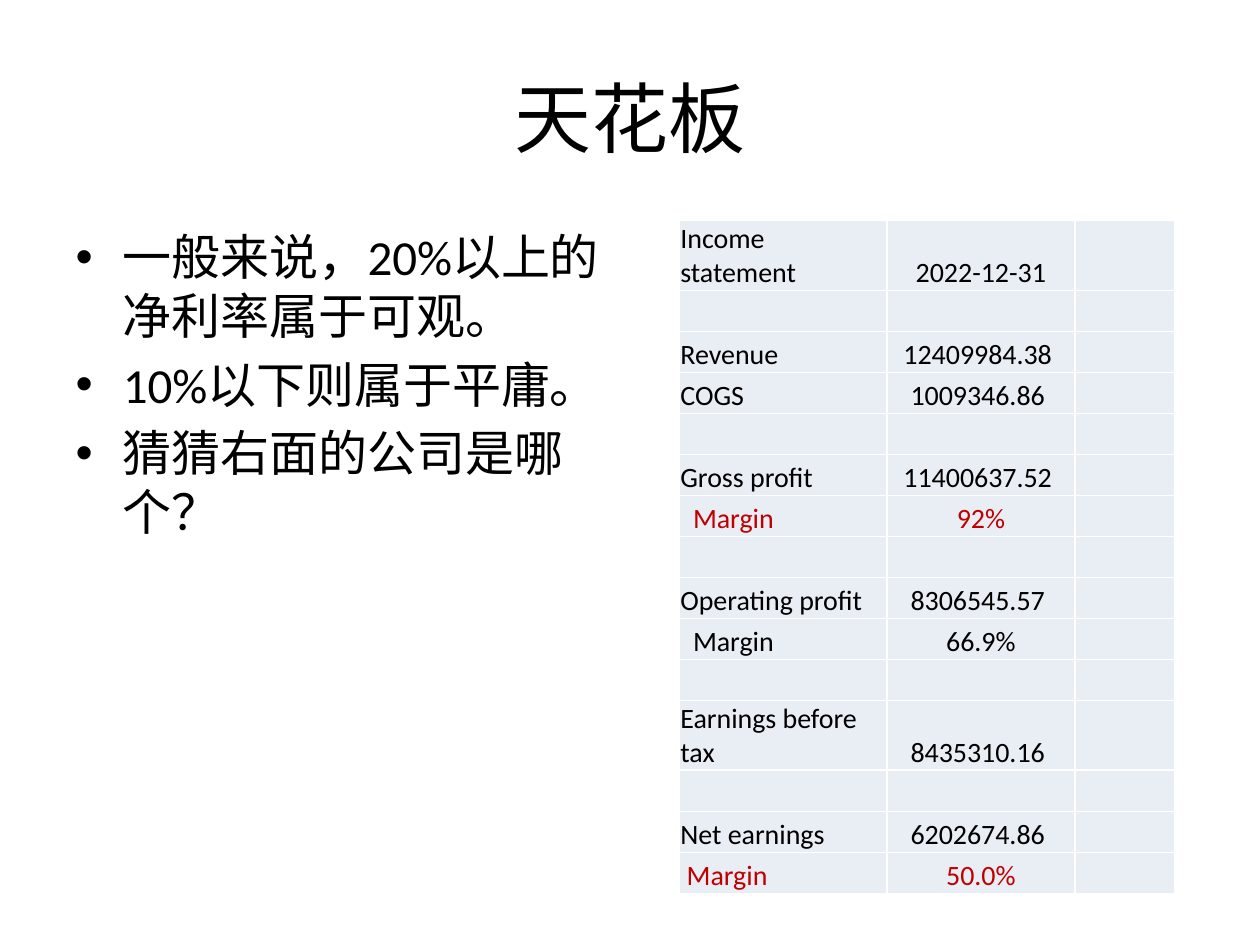
import pptx
import pptx.dml.color
import pptx.enum.text
import pptx.util

Inches = pptx.util.Inches
Pt = pptx.util.Pt
ALIGN = pptx.enum.text.PP_ALIGN
ANCHOR = pptx.enum.text.MSO_ANCHOR

BLACK, RED, WASH = "000000", "C00000", "E9EDF4"
TITLE_FONT = {"name": "Calibri", "size": Pt(44)}
ADVICE_FONT = {"name": "Calibri", "size": Pt(28)}
FIGURE_FONT = {"name": "Calibri", "size": Pt(16)}
CELL_FORMAT = {
    "vertical_anchor": ANCHOR.BOTTOM,
    "margin_left": Inches(0.01),
    "margin_right": Inches(0.01),
    "margin_top": Inches(0.01),
    "margin_bottom": 0,
}

ADVICE = [
    "一般来说，20%以上的净利率属于可观。",
    "10%以下则属于平庸。",
    "猜猜右面的公司是哪个？",
]
COLUMN_WIDTHS = [1.65, 1.49, 0.79]
TALL_ROW = 0.55
BLANK = ("", "", 0, BLACK)
STATEMENT = [
    ("Income statement", "2022-12-31", 0, BLACK),
    BLANK,
    ("Revenue", "12409984.38 ", 0, BLACK),
    ("COGS", "1009346.86 ", 0, BLACK),
    BLANK,
    ("Gross profit", "11400637.52 ", 0, BLACK),
    ("Margin", "92%", 0.1, RED),
    BLANK,
    ("Operating profit", "8306545.57 ", 0, BLACK),
    ("Margin", "66.9%", 0.1, BLACK),
    BLANK,
    ("Earnings before tax", "8435310.16 ", 0, BLACK),
    BLANK,
    ("Net earnings", "6202674.86 ", 0, BLACK),
    ("Margin", "50.0%", 0.05, RED),
]


def color(hex_value):
    return pptx.dml.color.RGBColor.from_string(hex_value)


def apply_format(target, values):
    for attribute, value in values.items():
        setattr(target, attribute, value)


def style_font(font, values, hex_value):
    apply_format(font, values)
    font.color.rgb = color(hex_value)


def place(placeholder, box):
    edges = ("left", "top", "width", "height")
    apply_format(placeholder, dict(zip(edges, map(Inches, box))))


def add_heading(slide, box):
    heading = slide.shapes.title
    place(heading, box)
    heading.text_frame.text = "天花板"
    heading.text_frame.vertical_anchor = ANCHOR.MIDDLE
    line = heading.text_frame.paragraphs[0]
    line.alignment = ALIGN.CENTER
    style_font(line.runs[0].font, TITLE_FONT, BLACK)


def add_advice(slide, box):
    advice = slide.placeholders[1]
    place(advice, box)
    advice.text_frame.text = "\n".join(ADVICE)
    for point in advice.text_frame.paragraphs:
        style_font(point.runs[0].font, ADVICE_FONT, BLACK)
    advice.text_frame.paragraphs[0].space_before = Pt(0)


def fill_cell(cell, wording, alignment, indent, hex_value):
    apply_format(cell, CELL_FORMAT)
    cell.margin_left += Inches(indent)
    cell.fill.solid()
    cell.fill.fore_color.rgb = color(WASH)
    entry = cell.text_frame.paragraphs[0]
    entry.alignment = alignment
    style_font(entry.font, FIGURE_FONT, hex_value)
    if wording:
        entry.text = wording
        style_font(entry.runs[0].font, FIGURE_FONT, hex_value)


def add_statement(slide, box):
    statement = slide.shapes.add_table(
        len(STATEMENT), len(COLUMN_WIDTHS), *map(Inches, box)
    ).table
    apply_format(statement, {"first_row": False, "horz_banding": False})
    for column, width in zip(statement.columns, COLUMN_WIDTHS):
        column.width = Inches(width)
    row_height = (box[3] - TALL_ROW) / (len(STATEMENT) - 1)
    for row, (item, amount, indent, hex_value) in zip(statement.rows, STATEMENT):
        wraps = item == "Earnings before tax"
        row.height = Inches(TALL_ROW if wraps else row_height)
        item_cell, amount_cell, spare_cell = row.cells
        fill_cell(item_cell, item, ALIGN.LEFT, indent, hex_value)
        fill_cell(amount_cell, amount, ALIGN.CENTER, 0, hex_value)
        fill_cell(spare_cell, "", ALIGN.LEFT, 0, hex_value)


def main():
    deck = pptx.Presentation()
    deck.slide_width, deck.slide_height = Inches(10), Inches(7.5)
    slide = deck.slides.add_slide(deck.slide_layouts[1])
    add_heading(slide, (0.5, 0.3, 9, 1.25))
    add_advice(slide, (0.5, 1.75, 4.42, 4.95))
    add_statement(slide, (5.39, 1.75, 3.93, 5.11))
    deck.save("out.pptx")


if __name__ == "__main__":
    main()
